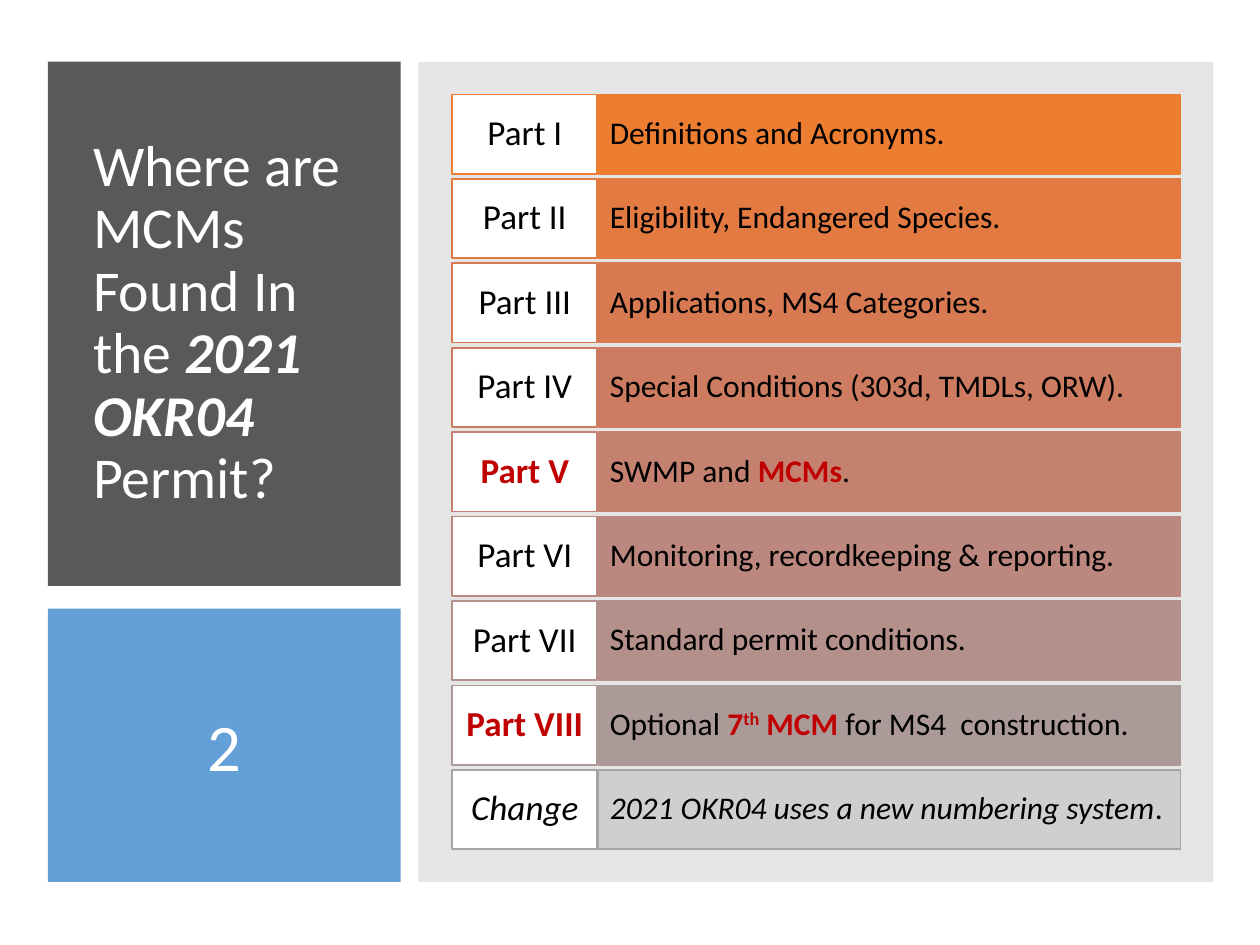
from lxml.etree import SubElement
from pptx import Presentation
from pptx.dml.color import RGBColor
from pptx.enum.shapes import MSO_SHAPE
from pptx.enum.text import MSO_ANCHOR, PP_ALIGN
from pptx.oxml.ns import qn
from pptx.util import Inches, Pt

FONT = "Calibri"
COLORS = {
    "white": "FFFFFF",
    "black": "000000",
    "title panel": "595959",
    "number panel": "5B9BD5",
    "list panel": "808080",
    "highlight": "C00000",
    "change fill": "D0CECE",
    "change line": "A5A5A5",
}

# Each run is (text, style); styles: "" plain, "b" bold, "i" italic,
# "h" highlighted, "s" superscript.
TITLE = [("Where are MCMs Found In the ", ""), ("2021 OKR04 ", "bi"), ("Permit?", "")]
NUMBER = [("2", "")]

# (part, part style, description runs, row colour)
PARTS = [
    ("Part I", "", [("Definitions and Acronyms.", "")], "ED7D31"),
    ("Part II", "", [("Eligibility, Endangered Species.", "")], "E27A42"),
    ("Part III", "", [("Applications, MS4 Categories.", "")], "D87A51"),
    ("Part IV", "", [("Special Conditions (303d, TMDLs, ORW).", "")], "CE7C61"),
    ("Part V", "bh", [("SWMP and ", ""), ("MCMs", "bh"), (".", "")], "C48170"),
    ("Part VI", "", [("Monitoring, recordkeeping & reporting.", "")], "BC877E"),
    ("Part VII", "", [("Standard permit conditions.", "")], "B4908B"),
    ("Part VIII", "bh", [("Optional ", ""), ("7", "bh"), ("th", "bhs"), (" MCM ", "bh"),
                         ("for MS4  construction.", "")], "AC9A99"),
    ("Change", "i", [("2021 OKR04 uses a new numbering system", "i"), (".", "")], None),
]

PANEL_TOP = 0.49
LEFT_PANEL_LEFT, LEFT_PANEL_WIDTH = 0.38, 2.8
ROW_TOP, ROW_PITCH, ROW_HEIGHT = 0.75, 0.67, 0.63
PART_LEFT, PART_WIDTH = 3.59, 1.15
DESCRIPTION_LEFT, DESCRIPTION_WIDTH = 4.75, 4.62


def add_rectangle(slide, box, fill, line=None, opacity=None):
    shape = slide.shapes.add_shape(MSO_SHAPE.RECTANGLE, *map(Inches, box))
    shape.shadow.inherit = False
    shape.fill.solid()
    shape.fill.fore_color.rgb = RGBColor.from_string(fill)
    if opacity is not None:
        color = shape.fill._xPr.find(qn("a:solidFill"))[0]
        SubElement(color, qn("a:alpha")).set("val", str(opacity * 1000))
    if line:
        shape.line.color.rgb = RGBColor.from_string(line)
        shape.line.width = Pt(1)
    else:
        shape.line.fill.background()
    return shape


def write_text(shape, runs, size, color, align=PP_ALIGN.LEFT, insets=(0.1, 0.05), spacing=0.9):
    """Fill a shape with one vertically centred paragraph; insets are (side, top and bottom)."""
    frame = shape.text_frame
    frame.word_wrap = True
    frame.vertical_anchor = MSO_ANCHOR.MIDDLE
    frame.margin_left = frame.margin_right = Inches(insets[0])
    frame.margin_top = frame.margin_bottom = Inches(insets[1])
    paragraph = frame.paragraphs[0]
    paragraph.alignment = align
    paragraph.line_spacing = spacing
    for text, style in runs:
        run = paragraph.add_run()
        run.text = text
        run.font.name = FONT
        run.font.size = Pt(size)
        run.font.bold = "b" in style
        run.font.italic = "i" in style
        run_color = COLORS["highlight"] if "h" in style else color
        run.font.color.rgb = RGBColor.from_string(run_color)
        if "s" in style:
            run.font._element.set("baseline", "30000")


def add_left_panels(slide):
    add_rectangle(slide, (LEFT_PANEL_LEFT, PANEL_TOP, LEFT_PANEL_WIDTH, 4.16),
                  COLORS["title panel"])
    title = slide.shapes.add_textbox(*map(Inches, (0.64, 0.8, 2.33, 3.54)))
    write_text(title, TITLE, 33, COLORS["white"])

    add_rectangle(slide, (LEFT_PANEL_LEFT, 4.83, LEFT_PANEL_WIDTH, 2.17),
                  COLORS["number panel"], opacity=95)
    number = slide.shapes.add_textbox(*map(Inches, (0.97, 5.2, 1.62, 1.43)))
    write_text(number, NUMBER, 38, COLORS["white"], PP_ALIGN.CENTER, spacing=1.0)


def add_part_list(slide):
    add_rectangle(slide, (3.32, PANEL_TOP, 6.31, 6.51), COLORS["list panel"], opacity=20)
    for index, (part, part_style, description, row_color) in enumerate(PARTS):
        top = ROW_TOP + index * ROW_PITCH
        fill = row_color or COLORS["change fill"]
        line = row_color or COLORS["change line"]
        description_box = add_rectangle(
            slide, (DESCRIPTION_LEFT, top, DESCRIPTION_WIDTH, ROW_HEIGHT), fill, line)
        write_text(description_box, description, 18, COLORS["black"], insets=(0.09, 0.16))
        part_box = add_rectangle(
            slide, (PART_LEFT, top, PART_WIDTH, ROW_HEIGHT), COLORS["white"], line)
        write_text(part_box, [(part, part_style)], 20, COLORS["black"],
                   PP_ALIGN.CENTER, insets=(0.06, 0.06))


def main():
    presentation = Presentation()
    presentation.slide_width = Inches(10)
    presentation.slide_height = Inches(7.5)
    slide = presentation.slides.add_slide(presentation.slide_layouts[6])
    add_left_panels(slide)
    add_part_list(slide)
    presentation.save("out.pptx")


if __name__ == "__main__":
    main()
